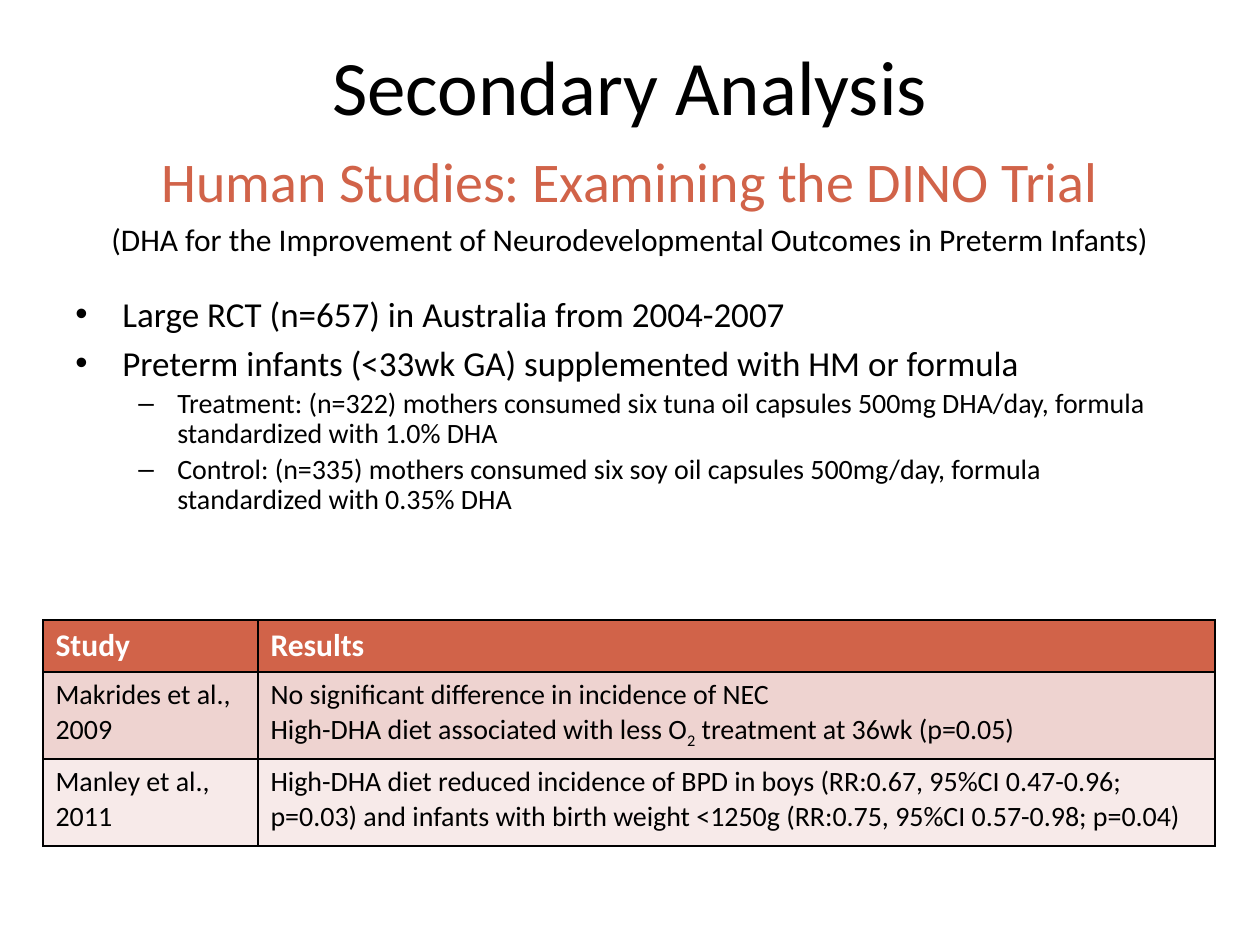
from lxml.etree import SubElement as Sub
from pptx import Presentation
from pptx.dml.color import RGBColor
from pptx.enum.text import MSO_ANCHOR as Anchor, PP_ALIGN as Align
from pptx.oxml.ns import qn
from pptx.util import Pt

SCALE = 914400 / 126
FONT = "Calibri"
BLACK, WHITE, RUST = "000000", "FFFFFF", "D16349"
BANDS = ["EED3D0", "F7EAE9"]

INTRO = [
    ("Human Studies: Examining the DINO Trial", 32, RUST, 6.4),
    ("(DHA for the Improvement of Neurodevelopmental Outcomes in Preterm Infants)",
     18, BLACK, 3.6),
]
POINTS = [
    (0, "Large RCT (n=657) in Australia from 2004-2007", 20),
    (0, "Preterm infants (<33wk GA) supplemented with HM or formula", 4),
    (1, "Treatment: (n=322) mothers consumed six tuna oil capsules 500mg DHA/day, "
        "formula standardized with 1.0% DHA", 3.2),
    (1, "Control: (n=335) mothers consumed six soy oil capsules 500mg/day, "
        "formula standardized with 0.35% DHA", 3.2),
]
LEVELS = [(20, 47, 47, "•", 1), (16, 102, 39, "–", 0.9)]
ROWS = [
    ("Study", "Results"),
    ("Makrides et al., 2009",
     "No significant difference in incidence of NEC\n"
     "High-DHA diet associated with less O|2| treatment at 36wk (p=0.05)"),
    ("Manley et al., 2011",
     "High-DHA diet reduced incidence of BPD in boys (RR:0.67, 95%CI 0.47-0.96; "
     "p=0.03) and infants with birth weight <1250g (RR:0.75, 95%CI 0.57-0.98; p=0.04)"),
]


def px(n):
    return round(n * SCALE)


def color(hex):
    return RGBColor.from_string(hex)


def style(run, size, hex, bold=False):
    font = run.font
    font.name, font.size, font.bold = FONT, Pt(size), bold
    font.color.rgb = color(hex)


def place(shape, box):
    shape.left, shape.top, shape.width, shape.height = map(px, box)


def bullet(para, left, hang, mark):
    props = para._p.get_or_add_pPr()
    props.set("marL", str(px(left)))
    props.set("indent", str(-px(hang)))
    Sub(props, qn("a:buFont"), typeface="Arial")
    Sub(props, qn("a:buChar"), char=mark)


def add_title(slide, box):
    title = slide.shapes.title
    place(title, box)
    frame = title.text_frame
    frame.text = "Secondary Analysis"
    frame.vertical_anchor = Anchor.MIDDLE
    para = frame.paragraphs[0]
    para.alignment = Align.CENTER
    style(para.runs[0], 44, BLACK)


def add_body(slide, box):
    frame = slide.shapes.add_textbox(*map(px, box)).text_frame
    frame.word_wrap = True
    frame.text = "\n".join([line[0] for line in INTRO] + [line[1] for line in POINTS])
    paras = frame.paragraphs
    for para, (_, size, hex, gap) in zip(paras, INTRO):
        para.alignment = Align.CENTER
        para.space_before = Pt(gap)
        style(para.runs[0], size, hex)
    for para, (level, _, gap) in zip(paras[len(INTRO):], POINTS):
        size, left, hang, mark, lead = LEVELS[level]
        para.level = level
        para.line_spacing = lead
        para.space_before = Pt(gap)
        bullet(para, left, hang, mark)
        style(para.runs[0], size, BLACK)


def border(cell):
    props = cell._tc.get_or_add_tcPr()
    for i, side in enumerate(("lnL", "lnR", "lnT", "lnB")):
        line = props.makeelement(qn(f"a:{side}"), {"w": str(Pt(1))})
        fill = Sub(line, qn("a:solidFill"))
        Sub(fill, qn("a:srgbClr"), val=BLACK)
        props.insert(i, line)


def fill_cell(cell, text, head, band):
    cell.fill.solid()
    cell.fill.fore_color.rgb = color(RUST if head else band)
    border(cell)
    frame = cell.text_frame
    frame.text = text.replace("|", "")
    for para, line in zip(frame.paragraphs, text.split("\n")):
        parts = line.split("|")
        para.runs[0].text = parts[0]
        for part in parts[1:]:
            para.add_run().text = part
        for i, run in enumerate(para.runs):
            style(run, 18 if head else 16, WHITE if head else BLACK, head)
            if i % 2:
                run._r.get_or_add_rPr().set("baseline", "-25000")


def add_grid(slide, box, cols, rows):
    table = slide.shapes.add_table(len(rows), len(cols), *map(px, box)).table
    for col, width in zip(table.columns, cols):
        col.width = px(width)
    for r, (row, height) in enumerate(zip(table.rows, rows)):
        row.height = px(height)
        for cell, text in zip(row.cells, ROWS[r]):
            fill_cell(cell, text, r == 0, BANDS[(r - 1) % 2])


def main():
    deck = Presentation()
    deck.slide_width, deck.slide_height = px(1260), px(945)
    slide = deck.slides.add_slide(deck.slide_layouts[5])
    add_title(slide, (63, 29, 1134, 111))
    add_body(slide, (63, 140, 1134, 420))
    add_grid(slide, (43, 620, 1172, 226), (215, 957), (52, 87, 87))
    deck.save("out.pptx")


if __name__ == "__main__":
    main()
